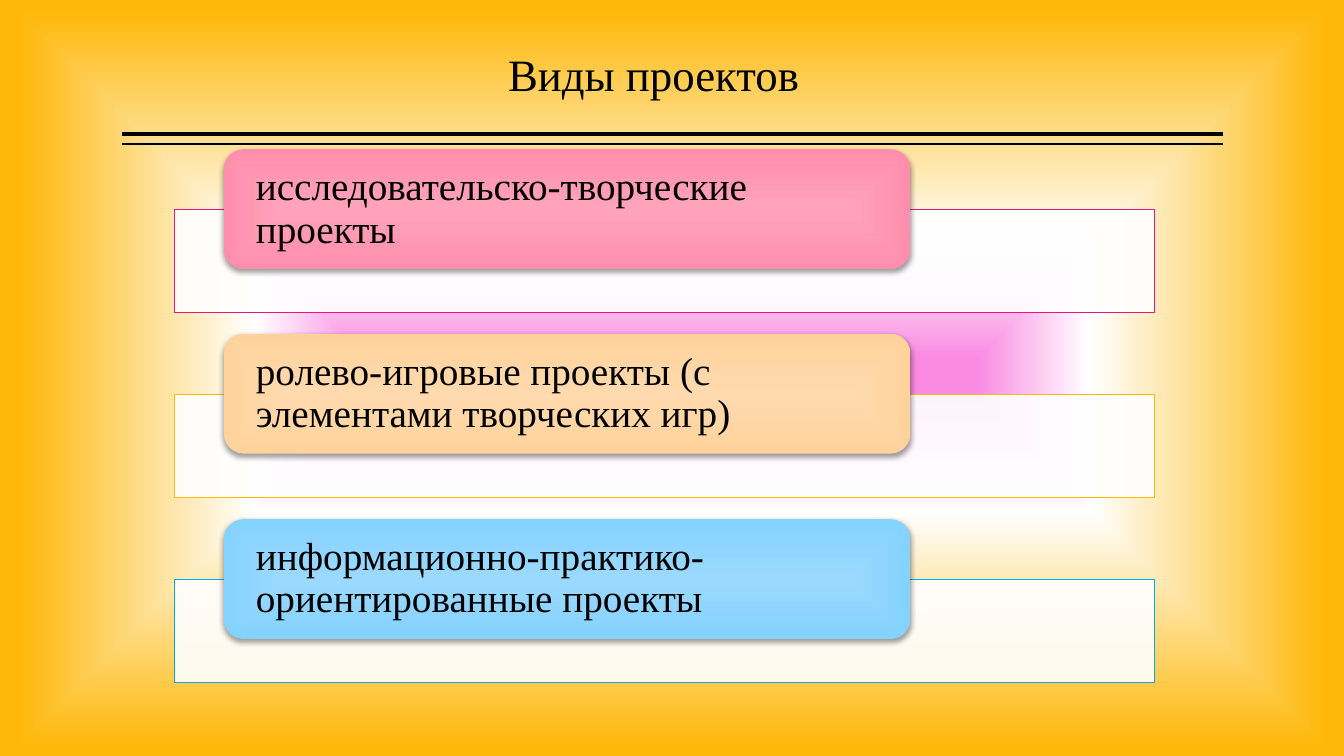
from lxml import etree
from pptx import Presentation, util as u
from pptx.dml.color import RGBColor
from pptx.enum import shapes, text
from pptx.oxml import parse_xml
from pptx.oxml.ns import nsdecls, qn

THEME = {
    "font": "Times New Roman", "ink": "000000", "band": "FFFFFF",
    "title": 32, "body": 28,
    "back": [(5, "FA8AE2"), (35, "FFFFFF"), (97, "FEB80A")],
}
KINDS = [  # label, band outline, card centre, card edge
    ("исследовательско-творческие проекты", "EA157A", "FFA3BB", "FF8EAD"),
    ("ролево-игровые проекты (с элементами творческих игр)", "FEB80A", "FFDAAE", "FFD29B"),
    ("информационно-практико-ориентированные проекты", "00ADDC", "9BD9FF", "84D2FF"),
]


def paint(fill, root, stops, path):
    """Fill with a gradient that spreads from the centre; root holds the fill's XML."""
    fill.gradient()
    old = root.find(".//" + qn("a:gradFill"))
    marks = "".join(f'<a:gs pos="{pos * 1000}"><a:srgbClr val="{tint}"/></a:gs>'
                    for pos, tint in stops)
    new = parse_xml(
        f'<a:gradFill {nsdecls("a")} rotWithShape="1"><a:gsLst>{marks}</a:gsLst>'
        f'<a:path path="{path}"><a:fillToRect l="50000" t="50000" r="50000" b="50000"/>'
        '</a:path></a:gradFill>')
    old.getparent().replace(old, new)


def write(shape, words, size, wrap=True, inset=None, anchor=text.MSO_ANCHOR.TOP, space=1.0):
    frame = shape.text_frame
    frame.word_wrap = wrap
    frame.vertical_anchor = anchor
    if inset is not None:
        frame.margin_left = frame.margin_right = inset
        frame.margin_top = frame.margin_bottom = 0
    para = frame.paragraphs[0]
    para.alignment = text.PP_ALIGN.LEFT
    para.line_spacing = space
    run = para.add_run()
    run.text = words
    run.font.name = THEME["font"]
    run.font.size = u.Pt(size)
    run.font.color.rgb = RGBColor.from_string(THEME["ink"])


# The slide is a grid of 1333 columns by 750 rows.
cell = u.Inches(0.01)
deck = Presentation()
deck.slide_width, deck.slide_height = 1333 * cell, 750 * cell
slide = deck.slides.add_slide(deck.slide_layouts[6])
paint(slide.background.fill, slide.element, THEME["back"], "shape")

# Double rule under the title
for row, width in ((133, 3), (143, 1)):
    rule = slide.shapes.add_connector(shapes.MSO_CONNECTOR.STRAIGHT, 1213 * cell, row * cell,
                                      121 * cell, row * cell)
    rule.line.width = u.Pt(width)
    rule.line.color.rgb = RGBColor.from_string(THEME["ink"])
    etree.SubElement(rule.element.spPr, qn("a:effectLst"))

title = slide.shapes.add_textbox(494 * cell, 41 * cell, 312 * cell, 64 * cell)
write(title, "Виды проектов", THEME["title"], wrap=False)
title.text_frame.auto_size = text.MSO_AUTO_SIZE.SHAPE_TO_FIT_TEXT

# One band with a raised card for each kind of project
for i, (label, edge, inner, outer) in enumerate(KINDS):
    top = 148 + i * 367 // 2
    band = slide.shapes.add_shape(shapes.MSO_SHAPE.RECTANGLE, 173 * cell, (top + 60) * cell,
                                  972 * cell, 102 * cell)
    band.shadow.inherit = False
    band.fill.solid()
    band.fill.fore_color.rgb = RGBColor.from_string(THEME["band"])
    tint = band.element.spPr.find(".//" + qn("a:srgbClr"))
    etree.SubElement(tint, qn("a:alpha"), val="90000")
    band.line.color.rgb = RGBColor.from_string(edge)
    band.line.width = u.Pt(0.5)

    card = slide.shapes.add_shape(shapes.MSO_SHAPE.ROUNDED_RECTANGLE, 222 * cell, top * cell,
                                  681 * cell, 119 * cell)
    paint(card.fill, card.element, [(0, inner), (100, outer)], "rect")
    card.line.fill.background()
    card.shadow.inherit = False
    card.element.spPr.find(qn("a:effectLst")).append(parse_xml(
        f'<a:outerShdw {nsdecls("a")} blurRad="{u.Pt(3.5)}" dist="{u.Pt(2)}" dir="5400000" '
        f'rotWithShape="0"><a:srgbClr val="{THEME["ink"]}"><a:alpha val="38000"/></a:srgbClr>'
        '</a:outerShdw>'))
    # The rounded corner already insets the text by 6 columns.
    write(card, label, THEME["body"], inset=26 * cell, anchor=text.MSO_ANCHOR.MIDDLE, space=0.9)

deck.save("out.pptx")
